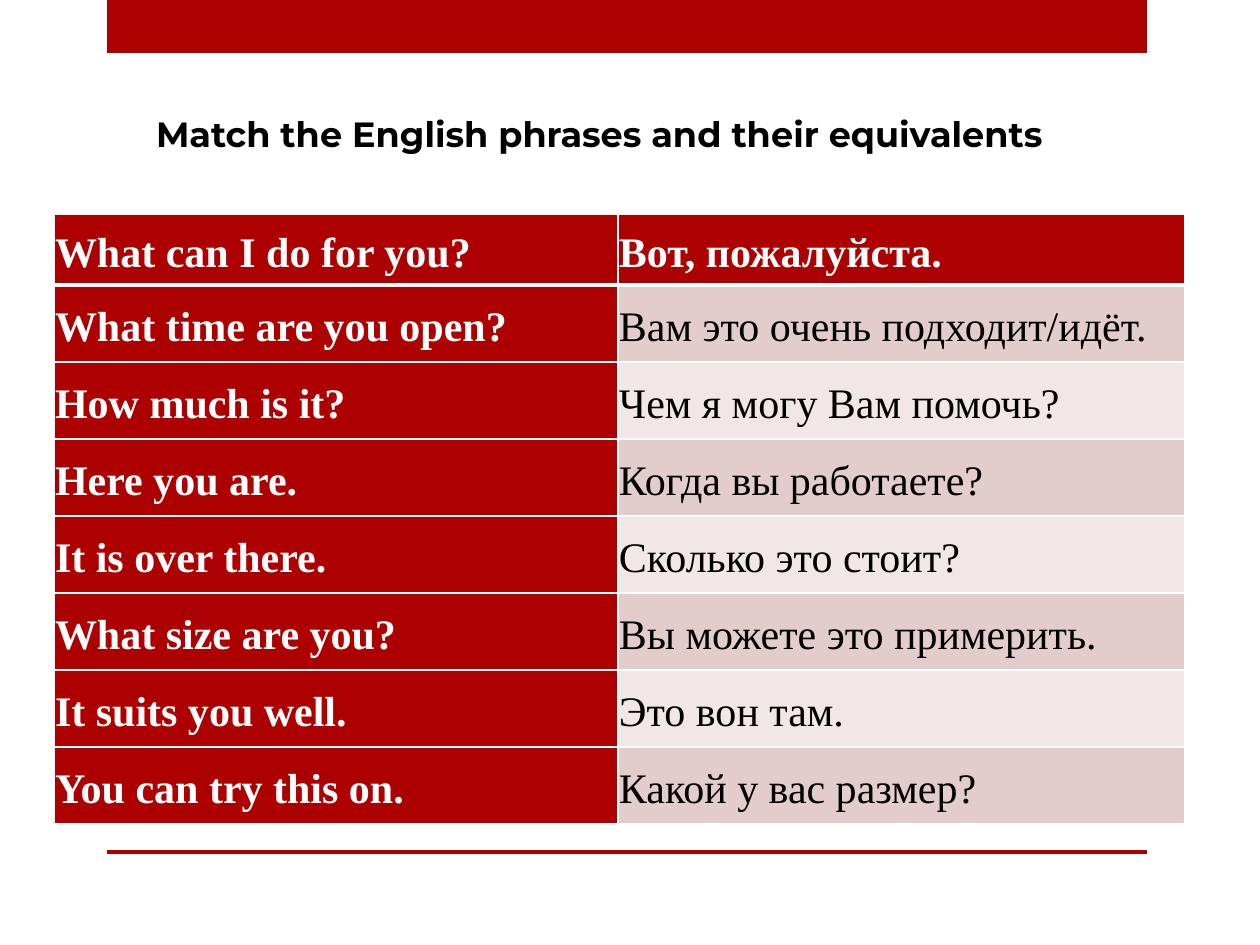
from lxml.etree import SubElement
from pptx import Presentation
from pptx.dml.color import RGBColor
from pptx.enum.shapes import MSO_SHAPE as Shape
from pptx.enum.text import MSO_ANCHOR as Anchor, MSO_AUTO_SIZE as Fit, PP_ALIGN as Align
from pptx.oxml.ns import qn
from pptx.util import Pt

PX = 914400 / 126
RED, WHITE, BLACK = "AD0101", "FFFFFF", "000000"
BANDS = ["F1E7E7", "E3CCCC"]
PHRASES = [
    ("What can I do for you?", "Вот, пожалуйста."),
    ("What time are you open?", "Вам это очень подходит/идёт."),
    ("How much is it?", "Чем я могу Вам помочь?"),
    ("Here you are.", "Когда вы работаете?"),
    ("It is over there.", "Сколько это стоит?"),
    ("What size are you?", "Вы можете это примерить."),
    ("It suits you well.", "Это вон там."),
    ("You can try this on.", "Какой у вас размер?"),
]


def px(n):
    return round(n * PX)


def paint(fill, color):
    fill.solid()
    fill.fore_color.rgb = RGBColor.from_string(color)


def style(par, font, size, color, bold):
    for run in par.runs:
        run.font.name = font
        run.font.size = Pt(size)
        run.font.bold = bold
        run.font.color.rgb = RGBColor.from_string(color)


def add_bar(slide, box):
    bar = slide.shapes.add_shape(Shape.RECTANGLE, *map(px, box))
    bar.shadow.inherit = False
    paint(bar.fill, RED)
    bar.line.fill.background()


def add_title(slide, box, text):
    title = slide.shapes.title
    title.left, title.top, title.width, title.height = map(px, box)
    frame = title.text_frame
    frame.text = text
    frame.word_wrap = True
    frame.auto_size = Fit.SHAPE_TO_FIT_TEXT
    frame.vertical_anchor = Anchor.TOP
    par = frame.paragraphs[0]
    par.alignment = Align.CENTER
    style(par, "Montserrat", 20, BLACK, True)


def add_edges(cell, low):
    """Draw white cell borders, the lower one `low` points wide."""
    props = cell._tc.get_or_add_tcPr()
    for side, width in zip("LRTB", (1, 1, 1, low)):
        line = SubElement(props, qn(f"a:ln{side}"), w=str(Pt(width)))
        fill = SubElement(line, qn("a:solidFill"))
        SubElement(fill, qn("a:srgbClr"), val=WHITE)


def fill_cell(cell, text, row, col):
    strong = row == 0 or col == 0
    add_edges(cell, 3 if row == 0 else 1)
    paint(cell.fill, RED if strong else BANDS[row % 2])
    cell.margin_left = cell.margin_right = px(1)
    cell.margin_top = cell.margin_bottom = px(1)
    cell.vertical_anchor = Anchor.MIDDLE
    cell.text_frame.text = text
    par = cell.text_frame.paragraphs[0]
    par.line_spacing = 1.15
    par.space_after = Pt(10)
    style(par, "Times New Roman", 24, WHITE if strong else BLACK, strong)


def add_phrases(slide, box, rows, head, left):
    """Place the phrase table; `head` is the first row's height, `left` the first column's width."""
    wide, high = box[2:]
    table = slide.shapes.add_table(len(rows), 2, *map(px, box)).table
    for col, width in zip(table.columns, (left, wide - left)):
        col.width = px(width)
    rest = (high - head) / (len(rows) - 1)
    for r, pair in enumerate(rows):
        table.rows[r].height = px(rest if r else head)
        for c, text in enumerate(pair):
            fill_cell(table.cell(r, c), text, r, c)


def main():
    deck = Presentation()
    deck.slide_width, deck.slide_height = px(1260), px(945)
    slide = deck.slides.add_slide(deck.slide_layouts[5])
    add_bar(slide, (107, 0, 1040, 53))
    add_bar(slide, (107, 850, 1040, 4))
    add_phrases(slide, (54, 214, 1131, 610), PHRASES, 71, 564)
    add_title(slide, (123, 106, 953, 55), "Match the English phrases and their equivalents")
    deck.save("out.pptx")


if __name__ == "__main__":
    main()
